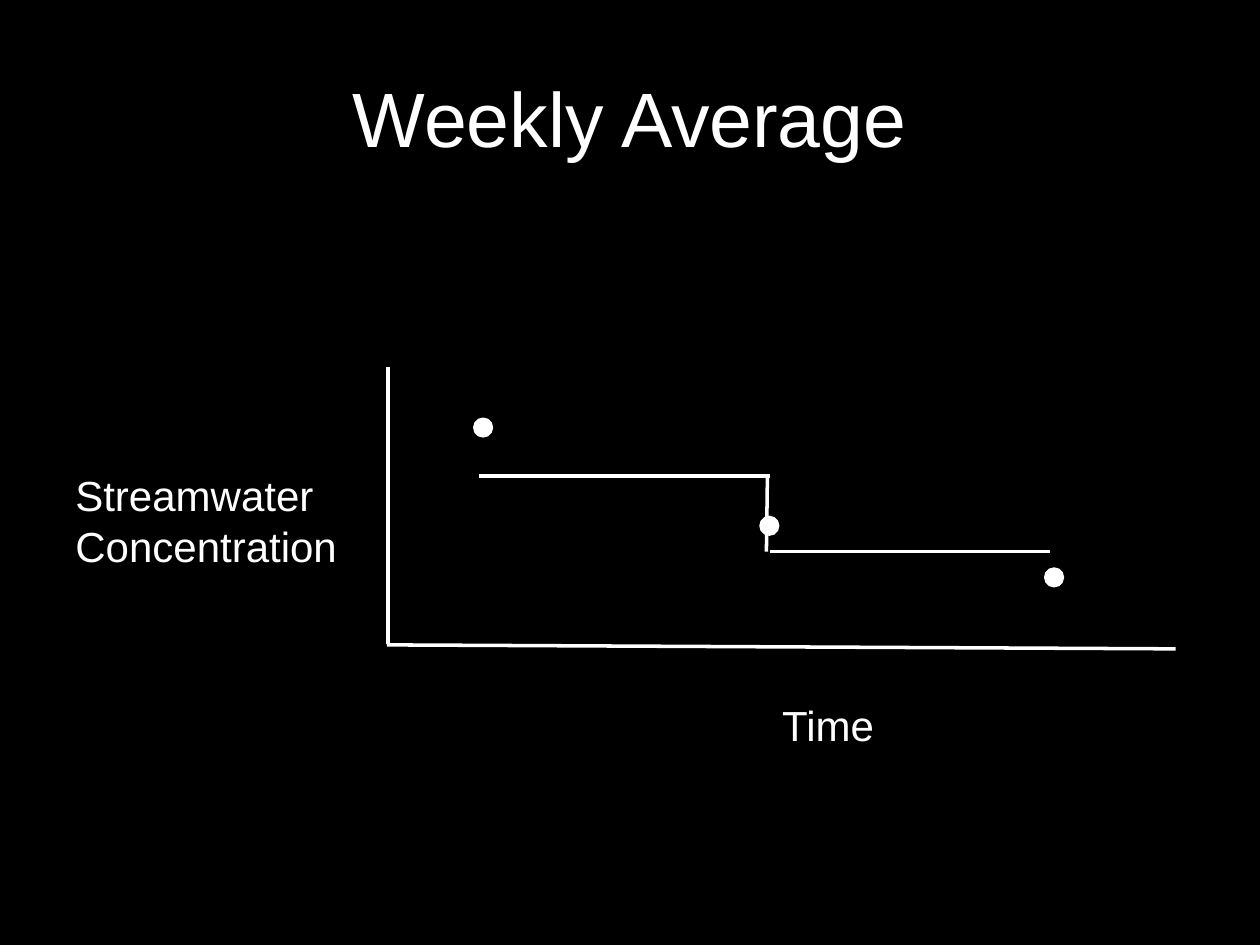
from lxml.etree import SubElement
from pptx import Presentation
from pptx.dml.color import RGBColor
from pptx.enum.shapes import MSO_CONNECTOR, MSO_SHAPE
from pptx.enum.text import MSO_ANCHOR, MSO_AUTO_SIZE, PP_ALIGN
from pptx.oxml.ns import qn
from pptx.util import Cm, Pt

COLORS = {"background": "000000", "ink": "FFFFFF"}
FONT = "Arial"
DOT_SIZE = 0.38


def color(name):
    return RGBColor.from_string(COLORS[name])


def set_values(target, values):
    for name, value in values.items():
        setattr(target, name, value)


def add_text(slide, box, lines, size, frame_values, align=PP_ALIGN.LEFT):
    frame = slide.shapes.add_textbox(*map(Cm, box)).text_frame
    set_values(frame, frame_values)
    for index, line in enumerate(lines):
        paragraph = frame.paragraphs[0] if index == 0 else frame.add_paragraph()
        paragraph.alignment = align
        run = paragraph.add_run()
        run.text = line
        set_values(run.font, {"name": FONT, "size": Pt(size)})
        run.font.color.rgb = color("ink")


def add_title(slide, box):
    values = {"word_wrap": True, "vertical_anchor": MSO_ANCHOR.MIDDLE}
    add_text(slide, box, ["Weekly Average"], 44, values, PP_ALIGN.CENTER)


def add_axis_label(slide, box, lines):
    values = {"word_wrap": False, "auto_size": MSO_AUTO_SIZE.SHAPE_TO_FIT_TEXT}
    add_text(slide, box, lines, 24, values)


def add_line(slide, start, end):
    line = slide.shapes.add_connector(
        MSO_CONNECTOR.STRAIGHT, *map(Cm, (*start, *end)))
    line.line.color.rgb = color("ink")
    line.line.width = Pt(2)
    SubElement(line._element.spPr, qn("a:effectLst"))


def add_dot(slide, x, y):
    radius = DOT_SIZE / 2
    dot = slide.shapes.add_shape(
        MSO_SHAPE.OVAL, *map(Cm, (x - radius, y - radius, DOT_SIZE, DOT_SIZE)))
    dot.shadow.inherit = False
    dot.fill.solid()
    dot.fill.fore_color.rgb = color("ink")
    dot.line.color.rgb = color("ink")
    dot.line.width = Pt(0.75)


def add_plot(slide, box):
    left, top, width, height = box
    axes = [((0, height - 0.08), (width, height)),
            ((0.02, height - 0.1), (0.02, 0))]
    samples = [(1.94, 1.23), (7.71, 3.21), (13.45, 4.25)]
    averages = [((1.85, 2.21), (7.72, 2.21)),
                ((7.72, 3.73), (13.36, 3.73)),
                ((7.67, 2.21), (7.65, 3.73))]

    def place(point):
        return left + point[0], top + point[1]

    for start, end in axes:
        add_line(slide, place(start), place(end))
    for sample in samples:
        add_dot(slide, *place(sample))
    for start, end in averages:
        add_line(slide, place(start), place(end))


def main():
    presentation = Presentation()
    set_values(presentation, {"slide_width": Cm(25.4), "slide_height": Cm(19.05)})
    slide = presentation.slides.add_slide(presentation.slide_layouts[6])
    slide.background.fill.solid()
    slide.background.fill.fore_color.rgb = color("background")
    add_title(slide, (1.27, 0.76, 22.86, 3.18))
    add_plot(slide, (7.8, 7.39, 15.9, 5.69))
    add_axis_label(slide, (15.52, 13.97, 2.39, 1.27), ["Time"])
    add_axis_label(slide, (1.27, 9.35, 5.84, 2.31), ["Streamwater", "Concentration"])
    presentation.save("out.pptx")


if __name__ == "__main__":
    main()
